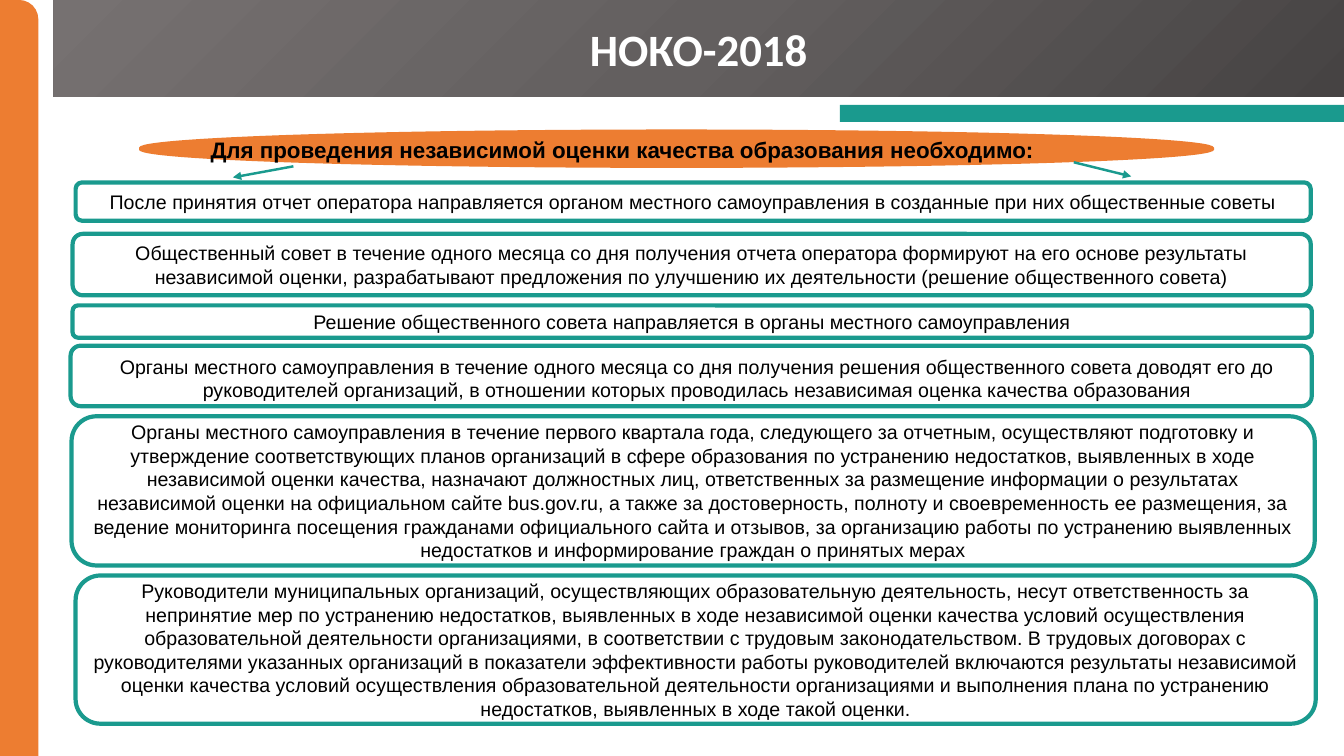
"""Build the slide on the steps of the independent education quality assessment."""
from copy import deepcopy
from typing import NamedTuple

from lxml import etree
from pptx import Presentation
from pptx import util as u
from pptx.dml.color import RGBColor
from pptx.enum import shapes, text
from pptx.oxml import ns

WHITE = RGBColor(0xFF, 0xFF, 0xFF)
BLACK = RGBColor(0x00, 0x00, 0x00)
ORANGE = RGBColor(0xED, 0x7D, 0x31)
TEAL = RGBColor(0x1A, 0x9A, 0x8E)
HEADER_GRAYS = (RGBColor(0x46, 0x43, 0x43), RGBColor(0x63, 0x5F, 0x5F), RGBColor(0x76, 0x71, 0x71))
CENTER = text.PP_ALIGN.CENTER
MIDDLE = text.MSO_ANCHOR.MIDDLE


class Box(NamedTuple):
    left: float
    top: float
    width: float
    height: float


class Step(NamedTuple):
    box: Box
    wording: str
    text_box: Box | None = None


class Arrow(NamedTuple):
    start: tuple[float, float]
    end: tuple[float, float]


STEPS = (
    Step(Box(0.75, 1.81, 12.25, 0.38),
         "После принятия отчет оператора направляется органом местного самоуправления "
         "в созданные при них общественные советы"),
    Step(Box(0.72, 2.32, 12.28, 0.61),
         "Общественный совет в течение одного месяца со дня получения отчета оператора "
         "формируют на его основе результаты независимой оценки, разрабатывают предложения "
         "по улучшению их деятельности (решение общественного совета)"),
    Step(Box(0.72, 3.03, 12.29, 0.32),
         "Решение общественного совета направляется в органы местного самоуправления"),
    Step(Box(0.7, 3.43, 12.31, 0.6),
         "Органы местного самоуправления в течение одного месяца со дня получения решения "
         "общественного совета доводят его до руководителей организаций, в отношении которых "
         "проводилась независимая оценка качества образования",
         Box(0.93, 3.47, 11.97, 0.57)),
    Step(Box(0.71, 4.13, 12.33, 1.48),
         "Органы местного самоуправления в течение первого квартала года, следующего за "
         "отчетным, осуществляют подготовку и утверждение соответствующих планов организаций "
         "в сфере образования по устранению недостатков, выявленных в ходе независимой оценки "
         "качества, назначают должностных лиц, ответственных за размещение информации о "
         "результатах независимой оценки на официальном сайте bus.gov.ru, а также за "
         "достоверность, полноту и своевременность ее размещения, за ведение мониторинга "
         "посещения гражданами официального сайта и отзывов, за организацию работы по "
         "устранению выявленных недостатков и информирование граждан о принятых мерах"),
    Step(Box(0.75, 5.71, 12.3, 1.47),
         "Руководители муниципальных организаций, осуществляющих образовательную деятельность, "
         "несут ответственность за непринятие мер по устранению недостатков, выявленных в ходе "
         "независимой оценки качества условий осуществления образовательной деятельности "
         "организациями, в соответствии с трудовым законодательством. В трудовых договорах с "
         "руководителями указанных организаций в показатели эффективности работы руководителей "
         "включаются результаты независимой оценки качества условий осуществления "
         "образовательной деятельности организациями и выполнения плана по устранению "
         "недостатков, выявленных в ходе такой оценки."),
)
ARROWS = (Arrow((2.91, 1.65), (2.31, 1.76)), Arrow((10.65, 1.61), (11.22, 1.75)))


def inches(box: Box) -> list[u.Length]:
    return [u.Inches(value) for value in box]


def add_shape(slide, kind, box: Box, fill: RGBColor, line: RGBColor | None = None,
              line_width: float = 3, corner: float | None = None):
    shape = slide.shapes.add_shape(kind, *inches(box))
    shape.shadow.inherit = False
    shape.fill.solid()
    shape.fill.fore_color.rgb = fill
    if line is None:
        shape.line.fill.background()
    else:
        shape.line.color.rgb = line
        shape.line.width = u.Pt(line_width)
    if corner is not None:
        shape.adjustments[0] = corner
    return shape


def add_text_box(slide, box: Box):
    return slide.shapes.add_textbox(*inches(box))


def write_text(shape, wording: str, *, size: float = 14, font: str = "Arial",
               color: RGBColor = BLACK, bold: bool = False,
               align=CENTER, anchor=MIDDLE) -> None:
    frame = shape.text_frame
    frame.word_wrap = True
    frame.vertical_anchor = anchor
    paragraph = frame.paragraphs[0]
    paragraph.alignment = align
    run = paragraph.add_run()
    run.text = wording
    run.font.size = u.Pt(size)
    run.font.name = font
    run.font.bold = bold
    run.font.color.rgb = color


def shade_header(header) -> None:
    fill = header.fill
    fill.gradient()
    fill.gradient_angle = 135
    first = header.element.spPr.find(".//" + ns.qn("a:gs"))
    first.addnext(deepcopy(first))
    for index, (stop, color) in enumerate(zip(fill.gradient_stops, HEADER_GRAYS)):
        stop.position = index / 2
        stop.color.rgb = color


def add_arrow(slide, arrow: Arrow) -> None:
    points = [u.Inches(value) for value in (*arrow.start, *arrow.end)]
    connector = slide.shapes.add_connector(shapes.MSO_CONNECTOR.STRAIGHT, *points)
    connector.line.color.rgb = TEAL
    connector.line.width = u.Pt(1.75)
    properties = connector.element.spPr
    line = properties.find(ns.qn("a:ln"))
    etree.SubElement(line, ns.qn("a:tailEnd"), type="triangle")
    etree.SubElement(properties, ns.qn("a:effectLst"))


def add_step(slide, step: Step) -> None:
    shape = add_shape(slide, shapes.MSO_SHAPE.ROUNDED_RECTANGLE, step.box, WHITE, TEAL, corner=0.167)
    if step.text_box is None:
        write_text(shape, step.wording)
    else:
        write_text(add_text_box(slide, step.text_box), step.wording, anchor=text.MSO_ANCHOR.TOP)


def main() -> None:
    presentation = Presentation()
    presentation.slide_width = u.Inches(13.33)
    presentation.slide_height = u.Inches(7.5)
    slide = presentation.slides.add_slide(presentation.slide_layouts[6])

    header = add_shape(slide, shapes.MSO_SHAPE.RECTANGLE, Box(0.53, 0, 12.8, 0.96), HEADER_GRAYS[0])
    shade_header(header)
    write_text(header, "НОКО-2018", size=32, font="Calibri", color=WHITE, bold=True)
    add_shape(slide, shapes.MSO_SHAPE.ROUND_1_RECTANGLE, Box(0, 0, 0.38, 7.5), ORANGE, corner=0.5)
    add_shape(slide, shapes.MSO_SHAPE.RECTANGLE, Box(8.33, 1.04, 5, 0.17), TEAL)
    add_shape(slide, shapes.MSO_SHAPE.OVAL, Box(1.39, 1.3, 10.64, 0.35), ORANGE, ORANGE, 2.25)
    write_text(add_text_box(slide, Box(1.99, 1.3, 10.21, 0.64)),
               "Для проведения независимой оценки качества образования необходимо:",
               size=16, bold=True, align=text.PP_ALIGN.LEFT, anchor=text.MSO_ANCHOR.TOP)
    for arrow in ARROWS:
        add_arrow(slide, arrow)
    for step in STEPS:
        add_step(slide, step)

    presentation.save("out.pptx")


if __name__ == "__main__":
    main()
